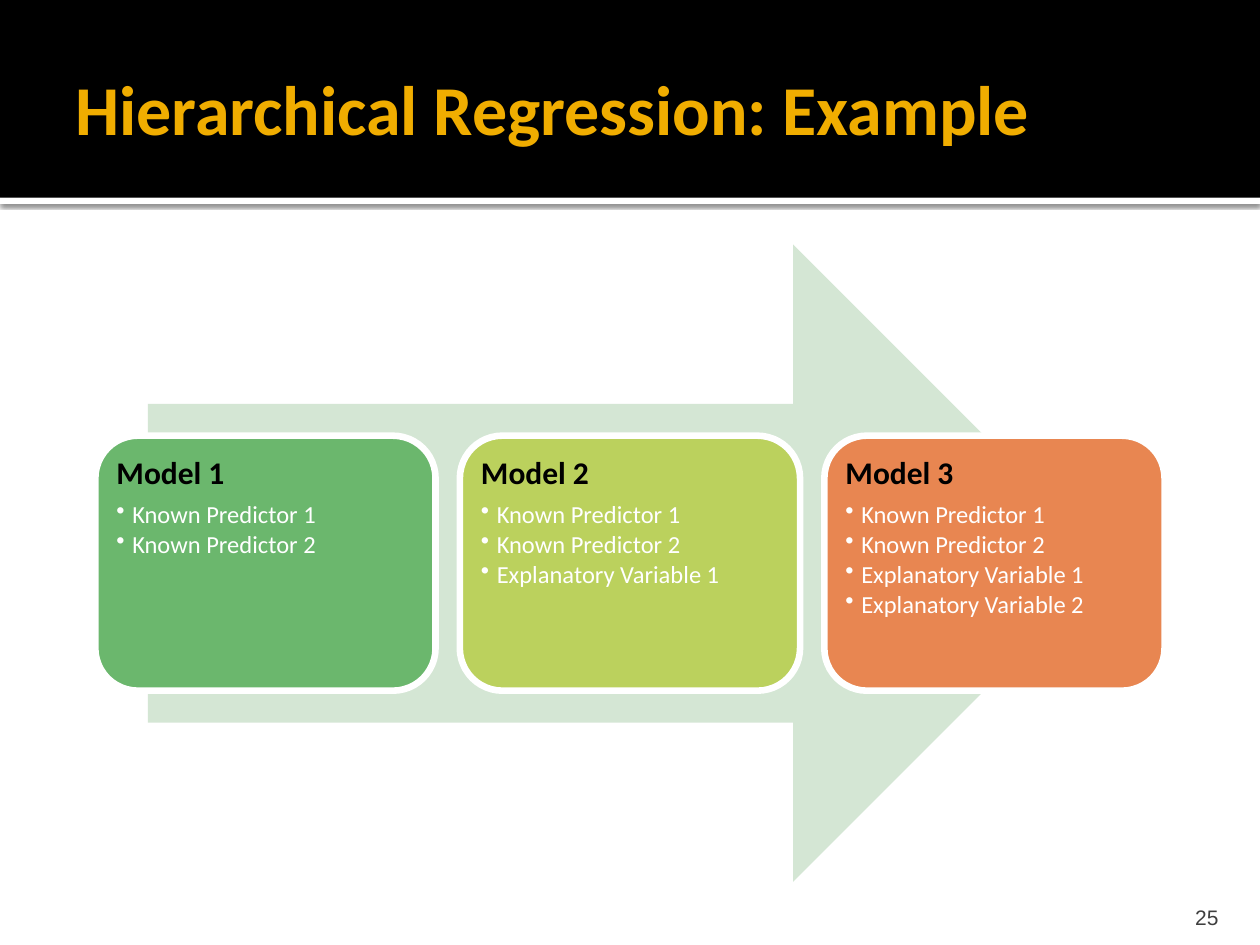
"""Build the slide on hierarchical regression with three growing models."""
from lxml.etree import SubElement
from pptx import Presentation
from pptx.dml.color import RGBColor
from pptx.enum.shapes import MSO_SHAPE
from pptx.enum.text import MSO_ANCHOR, PP_ALIGN
from pptx.oxml import parse_xml
from pptx.oxml.ns import nsdecls, qn
from pptx.util import Pt

BLACK = RGBColor(0x00, 0x00, 0x00)
WHITE = RGBColor(0xFF, 0xFF, 0xFF)
GOLD = RGBColor(0xF0, 0xAD, 0x00)
GRAY = RGBColor(0x3F, 0x3F, 0x3F)
PALE = RGBColor(0xD4, 0xE6, 0xD4)
GREEN = RGBColor(0x6B, 0xB7, 0x6D)
LIME = RGBColor(0xBB, 0xD1, 0x5D)
CORAL = RGBColor(0xE8, 0x86, 0x51)


def add_block(kind, left, top, width, height, color):
    block = slide.shapes.add_shape(kind, Pt(left), Pt(top), Pt(width), Pt(height))
    block.shadow.inherit = False
    block.fill.solid()
    block.fill.fore_color.rgb = color
    block.line.fill.background()
    return block


def add_text(para, text, size, color, bold=False, face="Calibri"):
    run = para.add_run()
    run.text = text
    run.font.name = face
    run.font.size = Pt(size)
    run.font.bold = bold
    run.font.color.rgb = color


deck = Presentation()
deck.slide_width, deck.slide_height = Pt(720), Pt(540)
slide = deck.slides.add_slide(deck.slide_layouts[6])

strip = add_block(MSO_SHAPE.RECTANGLE, 0, 113, 720, 3.6, WHITE)
strip.shadow.inherit = True
strip._element.spPr.append(parse_xml(
    f'<a:effectLst {nsdecls("a")}>'
    '<a:outerShdw blurRad="31750" dist="10160" dir="5400000" algn="tl" rotWithShape="0">'
    '<a:srgbClr val="000000"><a:alpha val="60000"/></a:srgbClr>'
    '</a:outerShdw></a:effectLst>'))
add_block(MSO_SHAPE.RECTANGLE, 0, 0, 720, 113, BLACK)

title = slide.shapes.add_textbox(Pt(36), Pt(12.2), Pt(648), Pt(98.6)).text_frame
title.word_wrap = True
title.vertical_anchor = MSO_ANCHOR.MIDDLE
title.margin_right = Pt(3.6)
add_text(title.paragraphs[0], "Hierarchical Regression: Example", 40, GOLD, True)

add_block(MSO_SHAPE.RIGHT_ARROW, 84.5, 139.7, 550.8, 364.3, PALE)

terms = ["Known Predictor 1", "Known Predictor 2",
         "Explanatory Variable 1", "Explanatory Variable 2"]
for index, color in enumerate([GREEN, LIME, CORAL]):
    card = add_block(MSO_SHAPE.ROUNDED_RECTANGLE,
                     54.5 + 208.3 * index, 249, 194.4, 145.7, color)
    card.line.color.rgb = WHITE
    card.line.width = Pt(3.78)
    frame = card.text_frame
    frame.word_wrap = True
    frame.vertical_anchor = MSO_ANCHOR.TOP
    frame.margin_left = frame.margin_right = Pt(5)
    frame.margin_top = frame.margin_bottom = Pt(5)
    head = frame.paragraphs[0]
    head.alignment = PP_ALIGN.LEFT
    head.line_spacing = 0.9
    head.space_after = Pt(6.3)
    add_text(head, f"Model {index + 1}", 18, BLACK, True)
    for term in terms[:index + 2]:
        item = frame.add_paragraph()
        item.level = 1
        item.alignment = PP_ALIGN.LEFT
        item.line_spacing = 0.9
        item.space_after = Pt(2.1)
        props = item._p.get_or_add_pPr()
        props.set("marL", str(Pt(9)))
        props.set("indent", str(-Pt(9)))
        SubElement(props, qn("a:buChar")).set("char", "•")
        add_text(item, term, 14, WHITE)

number = slide.shapes.add_textbox(Pt(645.8), Pt(509.8), Pt(57.6), Pt(21.6)).text_frame
number.word_wrap = True
number.vertical_anchor = MSO_ANCHOR.BOTTOM
number.margin_bottom = 0
number.paragraphs[0].alignment = PP_ALIGN.RIGHT
add_text(number.paragraphs[0], "25", 12, GRAY, face="Arial")

deck.save("out.pptx")
